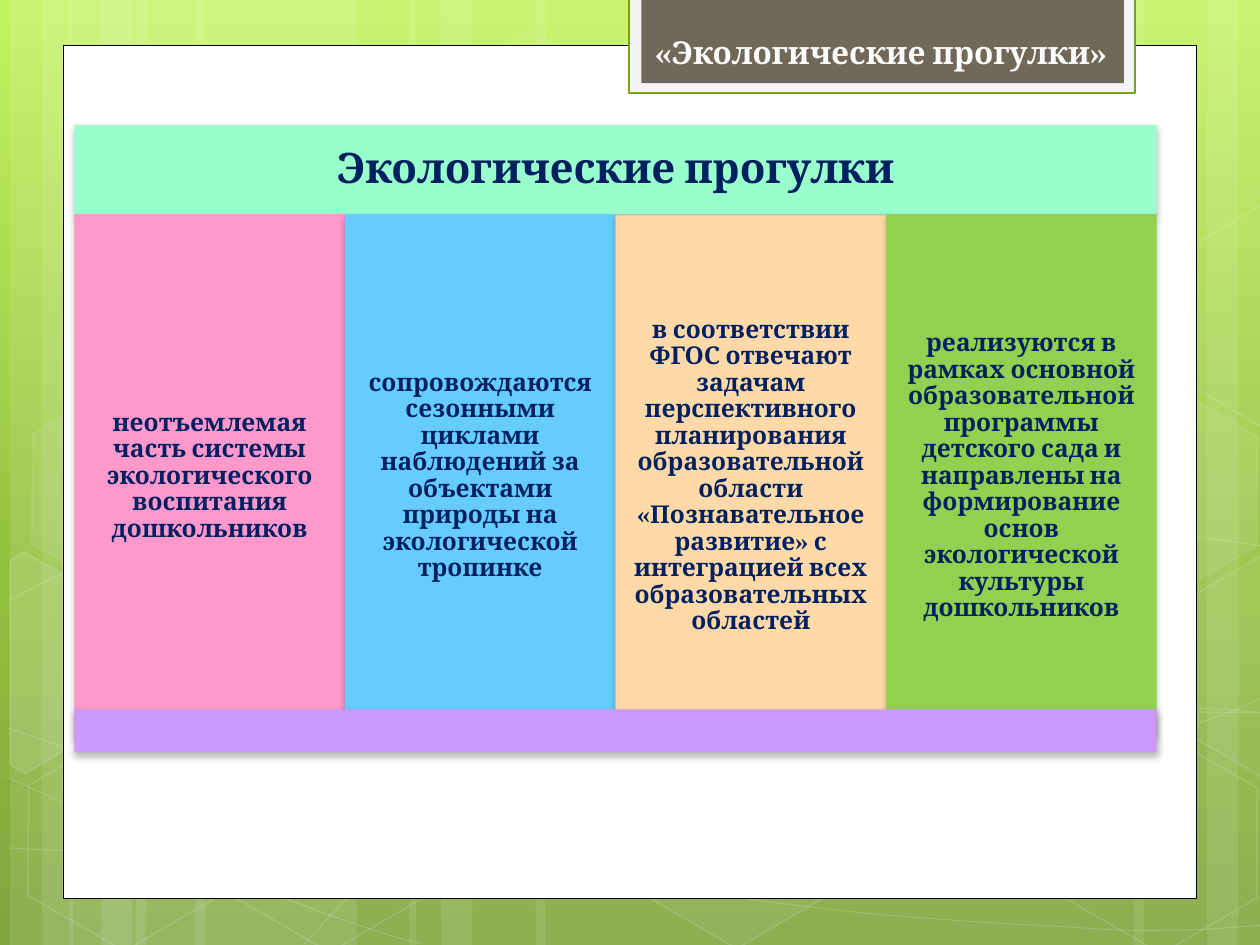
from copy import deepcopy
from dataclasses import dataclass
from lxml.etree import SubElement
from pptx import Presentation
from pptx.dml.color import RGBColor
from pptx.enum.shapes import MSO_SHAPE as Shape
from pptx.enum.text import MSO_ANCHOR as Anchor, PP_ALIGN as Align
from pptx.oxml.ns import qn
from pptx.util import Inches, Pt


@dataclass(frozen=True)
class Theme:
    font: str = "Cambria"
    gradient: tuple = ((0, "C3F35F"), (0.62, "93BF3F"), (1, "81A53E"))
    white: str = "FFFFFF"
    black: str = "000000"
    tab_edge: str = "74A510"
    tab_frame: str = "F5F5F5"
    tab: str = "71685A"
    tab_text: str = "FDFEFC"
    text: str = "002060"
    header: str = "99FFCC"
    footer: str = "CC99FF"
    columns: tuple = ("FF99CC", "66CCFF", "FFD9A7", "92D050")
    title_size: int = 18
    header_size: int = 24
    body_size: int = 14


THEME = Theme()

STRIPS = [(1.08, 1.75), (0.08, 0.5), (0.33, 0.83), (1.55, 1.75), (0.55, 0.5), (0.8, 0.83),
          (7.33, 1.75), (9.58, 0.5), (9, 0.83), (4.25, 3.08), (3.25, 0.5), (3.5, 0.83)]

CURVES = [
    [(0.07, 6.73), (0.61, 6.76), (1.15, 6.79), (1.9, 6.78), (2.65, 6.77), (3.58, 6.75),
     (4.58, 6.65), (5.58, 6.55), (7, 6.36), (7.92, 6.17), (8.83, 5.98), (9.77, 5.68), (10.07, 5.51)],
    [(0.07, 4.77), (0.36, 4.61), (0.65, 4.46), (1.21, 4.31), (1.78, 4.16), (2.59, 3.94),
     (3.47, 3.87), (4.36, 3.8), (5.44, 3.79), (6.54, 3.87), (7.64, 3.95), (9.47, 4.26), (10.07, 4.34)],
    [(0.06, 6.17), (1.27, 6.72), (2.47, 7.27), (3.34, 7.49)],
    [(0.07, 5.78), (0.38, 5.89), (0.7, 6), (1.28, 6.16), (1.86, 6.31), (2.73, 6.56),
     (3.57, 6.73), (4.4, 6.9), (5.45, 7.08), (6.28, 7.18), (7.11, 7.29), (8, 7.33),
     (8.53, 7.36), (9.05, 7.4), (9.19, 7.38), (9.45, 7.38), (9.71, 7.37), (9.89, 7.35), (10.07, 7.34)],
    [(2.42, 7.49), (2.6, 7.29), (2.78, 7.09), (3.02, 6.91), (3.26, 6.73), (3.6, 6.53),
     (3.88, 6.39), (4.16, 6.25), (4.33, 6.19), (4.7, 6.09), (5.06, 5.99), (5.73, 5.85),
     (6.08, 5.78), (6.44, 5.71), (6.49, 5.71), (6.8, 5.69), (7.11, 5.66), (7.6, 5.63),
     (7.94, 5.62), (8.29, 5.61), (8.86, 5.62), (8.86, 5.62), (9.08, 5.62), (9.31, 5.62),
     (9.53, 5.62), (9.71, 5.63), (9.88, 5.64), (9.97, 5.65), (10.06, 5.66), (10.03, 5.65), (10.06, 5.66)],
]
CURVES[-1].pop(21)

HEXAGONS = [(3.34, 0.36, 4, 8), (4.97, 5.89, 6, 12), (0.11, 5.91, 0, 12),
            (0.14, 3.12, 7, 8), (1.74, 5.92, 0, 12), (7.53, 4.53, 10, 12),
            (8.34, 5.93, 0, 12), (8.34, 3.14, 7, 8)]

CUT_HEXAGONS = [
    ([(0.08, 4.45), (0.19, 4.38), (0.96, 4.82), (0.95, 5.7), (0.2, 6.14), (0.08, 6.07)], 10),
    ([(9.26, 4.85), (10.01, 4.41), (10.09, 4.46), (10.09, 6.13), (10.02, 6.17), (9.26, 5.73)], 4),
    ([(9.26, 2.07), (10.01, 1.63), (10.1, 1.68), (10.09, 3.35), (10.02, 3.39), (9.26, 2.95)], 0),
]

TITLE = "«Экологические прогулки»"
HEADER = "Экологические прогулки"
COLUMN_TEXTS = [
    "неотъемлемая часть системы экологического воспитания дошкольников",
    "сопровождаются сезонными циклами наблюдений за объектами природы на экологической тропинке",
    "в соответствии ФГОС отвечают задачам перспективного планирования образовательной области "
    "«Познавательное развитие» с интеграцией всех образовательных областей",
    "реализуются в рамках основной образовательной программы детского сада и направлены на "
    "формирование основ экологической культуры дошкольников",
]


def paint(fill, color, alpha=100):
    if not alpha:
        fill.background()
        return
    fill.solid()
    fill.fore_color.rgb = RGBColor.from_string(color)
    if alpha < 100:
        color_node = fill._xPr.find(qn("a:solidFill"))[0]
        SubElement(color_node, qn("a:alpha"), val=str(alpha * 1000))


def style(shape, fill, alpha=100, line=None, width=0, line_alpha=100):
    shape.shadow.inherit = False
    paint(shape.fill, fill, alpha)
    paint(shape.line.fill, line, line_alpha if line else 0)
    if line:
        shape.line.width = Pt(width)


def add_shape(slide, box, kind=Shape.RECTANGLE, **look):
    shape = slide.shapes.add_shape(kind, *map(Inches, box))
    style(shape, **look)
    return shape


def add_outline(slide, points, closed, **look):
    vertices = [(Inches(x), Inches(y)) for x, y in points]
    builder = slide.shapes.build_freeform(*vertices[0])
    builder.add_line_segments(vertices[1:], close=closed)
    outline = builder.convert_to_shape()
    style(outline, **look)
    return outline


def bend(outline):
    segments = list(outline._element.iter(qn("a:lnTo")))
    for first in range(0, len(segments), 3):
        curve = SubElement(segments[first].getparent(), qn("a:cubicBezTo"))
        for segment in segments[first:first + 3]:
            curve.append(segment[0])
            segment.getparent().remove(segment)


def write(shape, text, size, color, align):
    frame = shape.text_frame
    frame.text = text
    frame.word_wrap = True
    paragraph = frame.paragraphs[0]
    paragraph.alignment = align
    font = paragraph.runs[0].font
    font.name, font.size, font.bold = THEME.font, Pt(size), True
    font.color.rgb = RGBColor.from_string(color)
    return frame


def add_panel(slide, box, color, text="", size=THEME.body_size, margin=0.06):
    panel = add_shape(slide, box, fill=color)
    effects = panel._element.spPr.find(qn("a:effectLst"))
    shadow = SubElement(effects, qn("a:outerShdw"), blurRad=str(Pt(4)), dist=str(Pt(2)),
                        dir="5400000", rotWithShape="0")
    shadow_color = SubElement(shadow, qn("a:srgbClr"), val=THEME.black)
    SubElement(shadow_color, qn("a:alpha"), val="28000")
    if text:
        frame = write(panel, text, size, THEME.text, Align.CENTER)
        frame.vertical_anchor = Anchor.MIDDLE
        frame.margin_left = frame.margin_right = Inches(margin)
        frame.margin_top = frame.margin_bottom = Inches(margin)
        frame.paragraphs[0].line_spacing = 0.9


def add_backdrop(slide, height):
    fill = slide.background.fill
    fill.gradient()
    fill.gradient_angle = 270
    first = fill.gradient_stops[0]._gs
    first.addnext(deepcopy(first))
    for stop, (position, color) in zip(fill.gradient_stops, THEME.gradient):
        stop.position = position
        stop.color.rgb = RGBColor.from_string(color)
    white = THEME.white
    for left, width in STRIPS:
        add_shape(slide, (left, 0, width, height), fill=white, alpha=10)
    for points in CURVES:
        bend(add_outline(slide, points, False, fill=white, alpha=0, line=white, width=0.5, line_alpha=20))
    for left, top, alpha, line_alpha in HEXAGONS:
        hexagon = add_shape(slide, (left, top, 1.75, 1.52), Shape.HEXAGON, fill=white, alpha=alpha,
                            line=white, width=1, line_alpha=line_alpha)
        hexagon.adjustments[0] = 0.285
        hexagon.rotation = 30
    for points, alpha in CUT_HEXAGONS:
        add_outline(slide, points, True, fill=white, alpha=alpha, line=white, width=1, line_alpha=12)


def add_title_tab(slide, left, top, width, height):
    add_shape(slide, (left, top, width, height), fill=THEME.tab_frame, line=THEME.tab_edge, width=1.25)
    add_shape(slide, (left + 0.1, top, width - 0.19, height - 0.08), fill=THEME.tab)
    title = slide.shapes.add_textbox(*map(Inches, (left + 0.11, top + 0.23, 4, 0.4)))
    write(title, TITLE, THEME.title_size, THEME.tab_text, Align.LEFT).word_wrap = False


def add_diagram(slide, left, top, width):
    header_height, column_height, footer_height = 0.71, 4.16, 0.34
    add_panel(slide, (left, top, width, header_height), THEME.header, HEADER, THEME.header_size, 0.1)
    column_top = top + header_height
    column_width = width / len(COLUMN_TEXTS)
    insets = (0, 0, 0.01, 0)
    for index, (color, text, inset) in enumerate(zip(THEME.columns, COLUMN_TEXTS, insets)):
        add_panel(slide, (left + index * column_width, column_top + inset,
                          column_width, column_height - 2 * inset), color, text)
    add_panel(slide, (left, top + 4.64, width, footer_height), THEME.footer)


def main():
    presentation = Presentation()
    presentation.slide_width, presentation.slide_height = Inches(10), Inches(7.5)
    slide = presentation.slides.add_slide(presentation.slide_layouts[6])
    add_backdrop(slide, 7.5)
    add_shape(slide, (0.5, 0.36, 9, 6.77), fill=THEME.white, line=THEME.black, width=0.5)
    add_title_tab(slide, 4.99, -0.02, 4.02, 0.76)
    add_diagram(slide, 0.59, 0.99, 8.59)
    presentation.save("out.pptx")


if __name__ == "__main__":
    main()
